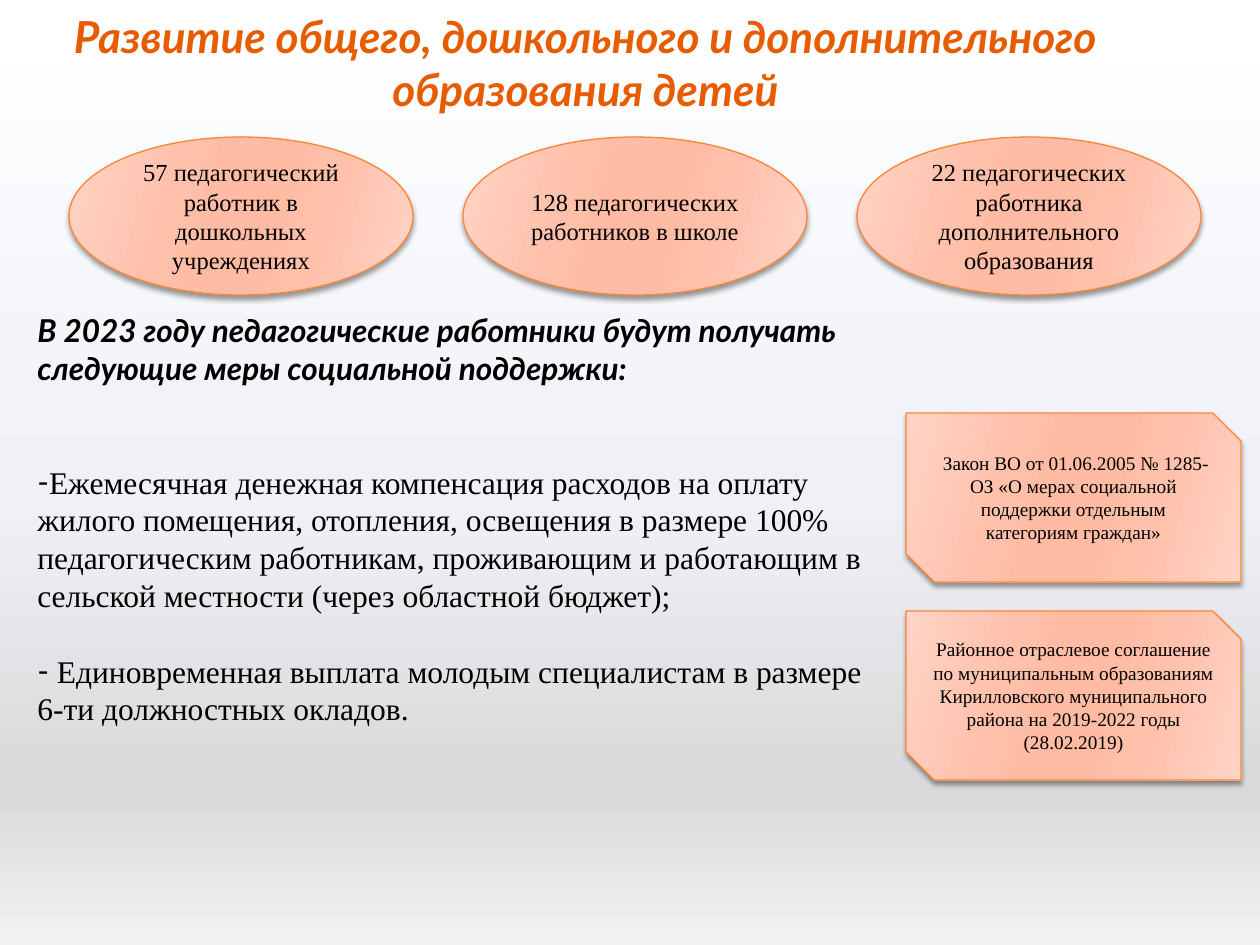
from lxml.etree import SubElement
from pptx import Presentation
from pptx.dml.color import RGBColor
from pptx.enum.shapes import MSO_SHAPE
from pptx.enum.text import MSO_ANCHOR, PP_ALIGN
from pptx.oxml.ns import qn
from pptx.util import Inches, Pt

PX = Inches(1) / 126
SERIF, SANS = "Times New Roman", "Lato"
PAGE_STOPS = [(0, "FFFFFF"), (53, "EFF1F7"), (83, "D9D9D9"), (100, "F2F2F2")]
PEACH_STOPS = [(0, "FFD4C6"), (30, "FFC1AC"), (45, "FFBBA3"),
               (55, "FFBBA3"), (73, "FFC1AC"), (100, "FFD4C6")]


def paint_gradient(fill, owner, stops, angle):
    """Give fill the (percent, hex) stops; owner is the XML element holding it."""
    fill.gradient()
    gradient = owner.find(".//" + qn("a:gradFill"))
    stop_list = gradient.find(qn("a:gsLst"))
    for old_stop in list(stop_list):
        stop_list.remove(old_stop)
    for percent, tint in stops:
        stop = SubElement(stop_list, qn("a:gs"), pos=str(percent * 1000))
        SubElement(stop, qn("a:srgbClr"), val=tint)
    gradient.find(qn("a:lin")).set("ang", str(angle * 60000))


def add_span(para, text, font_name, size, tint="000000", strong=False):
    """Add a run; strong means bold italic."""
    span = para.add_run()
    span.text = text
    span.font.name = font_name
    span.font.size = Pt(size)
    span.font.bold = span.font.italic = strong
    span.font.color.rgb = RGBColor.from_string(tint)


deck = Presentation()
deck.slide_width, deck.slide_height = Inches(10), Inches(7.5)
page = deck.slides.add_slide(deck.slide_layouts[6])
paint_gradient(page.background.fill, page.element, PAGE_STOPS, 90)

# Title
title = page.shapes.add_textbox(*(round(n * PX) for n in (20, 0, 1131, 125)))
title.text_frame.word_wrap = True
title.text_frame.vertical_anchor = MSO_ANCHOR.MIDDLE
para = title.text_frame.paragraphs[0]
para.alignment = PP_ALIGN.CENTER
add_span(para, "Развитие общего, дошкольного и дополнительного образования детей",
         SANS, 25.2, "E75C01", True)

# Staff ellipses in a row, legal cards in a column
staff = [
    "57 педагогический работник в дошкольных учреждениях",
    "128 педагогических работников в школе",
    "22 педагогических работника дополнительного образования",
]
laws = [
    " Закон ВО от 01.06.2005 № 1285-ОЗ «О мерах социальной поддержки "
    "отдельным категориям граждан»",
    "Районное отраслевое соглашение по муниципальным образованиям "
    "Кирилловского муниципального района на 2019-2022 годы (28.02.2019)",
]
figures = [(MSO_SHAPE.OVAL, (69 + 394 * i, 137, 344, 158), text, 14)
           for i, text in enumerate(staff)]
figures += [(MSO_SHAPE.SNIP_2_DIAG_RECTANGLE, (906, 413 + 198 * i, 335, 169), text, 11)
            for i, text in enumerate(laws)]

for kind, place, text, size in figures:
    figure = page.shapes.add_shape(kind, *(round(n * PX) for n in place))
    properties = figure.element.spPr
    paint_gradient(figure.fill, properties, PEACH_STOPS, 16)
    figure.line.color.rgb = RGBColor.from_string("FE8637")
    figure.line.width = Pt(0.75)
    figure.shadow.inherit = False
    shadow = SubElement(properties.find(qn("a:effectLst")), qn("a:outerShdw"),
                        blurRad=str(Pt(3)), dist=str(Pt(2)), dir="5400000", rotWithShape="0")
    shadow_color = SubElement(shadow, qn("a:srgbClr"), val="000000")
    SubElement(shadow_color, qn("a:alpha"), val="40000")
    figure.text_frame.vertical_anchor = MSO_ANCHOR.MIDDLE
    para = figure.text_frame.paragraphs[0]
    para.alignment = PP_ALIGN.CENTER
    add_span(para, text, SERIF, size)

# Support measures
box = page.shapes.add_textbox(*(round(n * PX) for n in (25, 305, 881, 432)))
box.text_frame.word_wrap = True
add_span(box.text_frame.paragraphs[0],
         "В 2023 году педагогические работники будут получать "
         "следующие меры социальной поддержки:", SANS, 18, strong=True)
measures = [
    (43.5, "Ежемесячная денежная компенсация расходов на оплату жилого помещения, "
           "отопления, освещения в размере 100% педагогическим работникам, проживающим "
           "и работающим в сельской местности (через областной бюджет);"),
    (22, " Единовременная выплата молодым специалистам в размере "
         "6-ти должностных окладов."),
]
for gap, text in measures:
    para = box.text_frame.add_paragraph()
    bullet_properties = para._p.get_or_add_pPr()
    bullet_properties.set("marL", "0")
    bullet_properties.set("indent", "0")
    SubElement(bullet_properties, qn("a:buFont"), typeface=SANS)
    SubElement(bullet_properties, qn("a:buChar"), char="-")
    para.space_before = Pt(gap)
    para.line_spacing = Pt(21.5)
    add_span(para, text, SERIF, 18)

deck.save("out.pptx")
